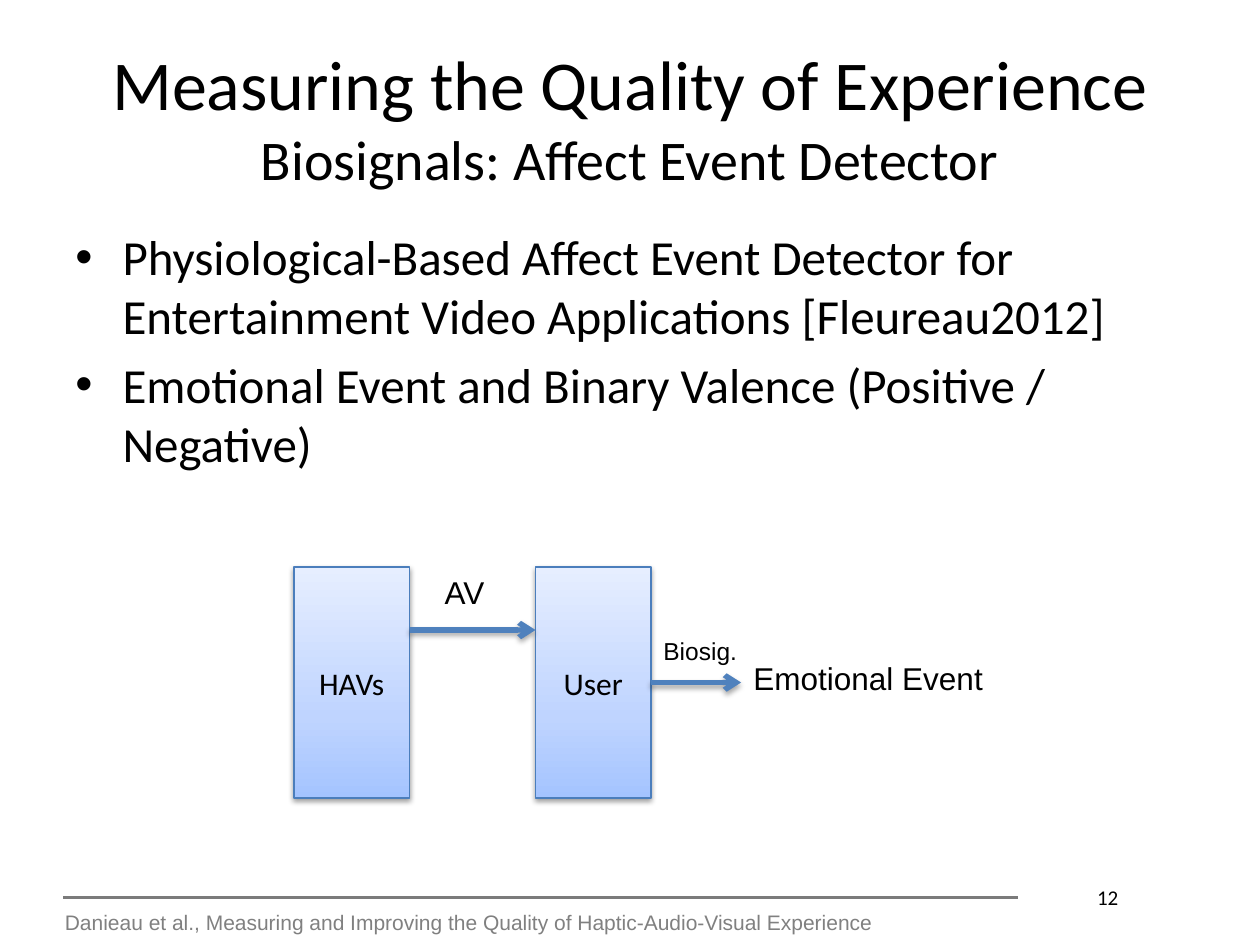
from dataclasses import dataclass
from typing import Any

from pptx import Presentation
from pptx.dml.color import RGBColor
from pptx.enum.shapes import MSO_CONNECTOR, MSO_SHAPE
from pptx.enum.text import MSO_ANCHOR, PP_ALIGN
from pptx.oxml import parse_xml
from pptx.oxml.ns import nsdecls, qn
from pptx.util import Pt

BLACK, GREY, RULE = "000000", "808080", "7B7B7B"
EDGE, ARROW = "4B7EBC", "4F81BD"
STOPS = ((0, "A4C4FF"), (35, "BFD4FF"), (100, "E6EEFF"))
BOX_TOP, BOX_WIDE, BOX_HIGH = 324, 66, 132


@dataclass
class Label:
    left: float
    top: float
    wide: float
    high: float
    runs: list[tuple[str, float]]
    face: str = "Arial"
    color: str = BLACK
    mid: bool = False
    wrap: bool = True


@dataclass
class Box:
    left: float
    name: str


@dataclass
class Arrow:
    start: float
    end: float
    y: float


LABELS = [
    Label(30, 516, 522, 22,
          [("Danieau et al., Measuring and Improving the Quality of "
            "Haptic-Audio-Visual Experience", 12)], color=GREY),
    Label(36, 21.6, 648, 90,
          [("Measuring the Quality of Experience ", 40),
           ("Biosignals: Affect Event Detector", 32)], "Calibri", mid=True),
    Label(582, 498, 102, 29, [("12", 12)], "Calibri", mid=True),
    Label(423.5, 373, 147, 29, [("Emotional Event", 18)], wrap=False),
    Label(247, 324, 47, 29, [("AV", 18)]),
    Label(372, 360, 65.5, 24, [("Biosig.", 14)]),
]
POINTS = [
    "Physiological-Based Affect Event Detector for Entertainment Video "
    "Applications [Fleureau2012]",
    "Emotional Event and Binary Valence (Positive / Negative)",
]
BOXES = [Box(168, "HAVs"), Box(306, "User")]
ARROWS = [Arrow(234, 306, 360), Arrow(372, 423.5, 390)]


def paint(code: str) -> RGBColor:
    return RGBColor.from_string(code)


def style(font: Any, size: float, face: str, color: str = BLACK) -> None:
    for key, val in {"size": Pt(size), "name": face}.items():
        setattr(font, key, val)
    font.color.rgb = paint(color)


def stroke(line: Any, color: str, width: float) -> None:
    line.color.rgb = paint(color)
    line.width = Pt(width)


def shade(props: Any, alpha: int, dist: float) -> None:
    """Add a soft drop shadow after the line."""
    props.append(parse_xml(
        f'<a:effectLst {nsdecls("a")}><a:outerShdw blurRad="{Pt(3.1)}" '
        f'dist="{Pt(dist)}" dir="5400000" rotWithShape="0">'
        f'<a:srgbClr val="{BLACK}"><a:alpha val="{alpha * 1000}"/></a:srgbClr>'
        '</a:outerShdw></a:effectLst>'))


def add_frame(slide: Any, left: float, top: float, wide: float, high: float) -> Any:
    frame = slide.shapes.add_textbox(Pt(left), Pt(top), Pt(wide), Pt(high)).text_frame
    frame.word_wrap = True
    return frame


def add_label(slide: Any, label: Label) -> None:
    frame = add_frame(slide, label.left, label.top, label.wide, label.high)
    frame.word_wrap = label.wrap
    para = frame.paragraphs[0]
    if label.mid:
        frame.vertical_anchor = MSO_ANCHOR.MIDDLE
        para.alignment = PP_ALIGN.CENTER
    for text, size in label.runs:
        run = para.add_run()
        run.text = text
        style(run.font, size, label.face, label.color)


def add_points(slide: Any, points: list[str]) -> None:
    frame = add_frame(slide, 36, 126, 648, 356.4)
    for num, text in enumerate(points):
        para = frame.add_paragraph() if num else frame.paragraphs[0]
        para.text = text
        props = para._p.get_or_add_pPr()
        for key, val in {"marL": Pt(27), "indent": -Pt(27)}.items():
            props.set(key, str(val))
        props.append(parse_xml(f'<a:buFont {nsdecls("a")} typeface="Arial"/>'))
        props.append(parse_xml(f'<a:buChar {nsdecls("a")} char="•"/>'))
        if num:
            para.space_before = Pt(5.6)
        style(para.font, 28, "Calibri")


def add_box(slide: Any, box: Box) -> None:
    shape = slide.shapes.add_shape(MSO_SHAPE.RECTANGLE, Pt(box.left), Pt(BOX_TOP),
                                   Pt(BOX_WIDE), Pt(BOX_HIGH))
    stroke(shape.line, EDGE, 0.75)
    props = shape.element.spPr
    stops = "".join(f'<a:gs pos="{pos * 1000}"><a:srgbClr val="{code}"/></a:gs>'
                    for pos, code in STOPS)
    props.find(qn("a:ln")).addprevious(parse_xml(
        f'<a:gradFill {nsdecls("a")} rotWithShape="1"><a:gsLst>{stops}</a:gsLst>'
        '<a:lin ang="16200000" scaled="0"/></a:gradFill>'))
    shade(props, 38, 1.6)
    frame = shape.text_frame
    frame.vertical_anchor = MSO_ANCHOR.MIDDLE
    para = frame.paragraphs[0]
    para.text = box.name
    para.alignment = PP_ALIGN.CENTER
    style(para.runs[0].font, 18, "Calibri")


def add_line(slide: Any, start: float, end: float, y: float,
             color: str, width: float) -> Any:
    line = slide.shapes.add_connector(MSO_CONNECTOR.STRAIGHT,
                                      Pt(start), Pt(y), Pt(end), Pt(y))
    stroke(line.line, color, width)
    return line.element.spPr


def add_arrow(slide: Any, arrow: Arrow) -> None:
    props = add_line(slide, arrow.start, arrow.end, arrow.y, ARROW, 3)
    props.find(qn("a:ln")).append(
        parse_xml(f'<a:tailEnd {nsdecls("a")} type="arrow"/>'))
    shade(props, 35, 1.8)


def main() -> None:
    deck = Presentation()
    deck.slide_width, deck.slide_height = Pt(720), Pt(540)
    slide = deck.slides.add_slide(deck.slide_layouts[6])

    # Footer rule
    rule = add_line(slide, 36, 582, 513, RULE, 1.5)
    rule.append(parse_xml(f'<a:effectLst {nsdecls("a")}/>'))

    # Bullet list
    add_points(slide, POINTS)

    # Flow from content to user to event
    for box in BOXES:
        add_box(slide, box)
    for arrow in ARROWS:
        add_arrow(slide, arrow)

    # Title, footer and flow labels
    for label in LABELS:
        add_label(slide, label)

    deck.save("out.pptx")


if __name__ == "__main__":
    main()
